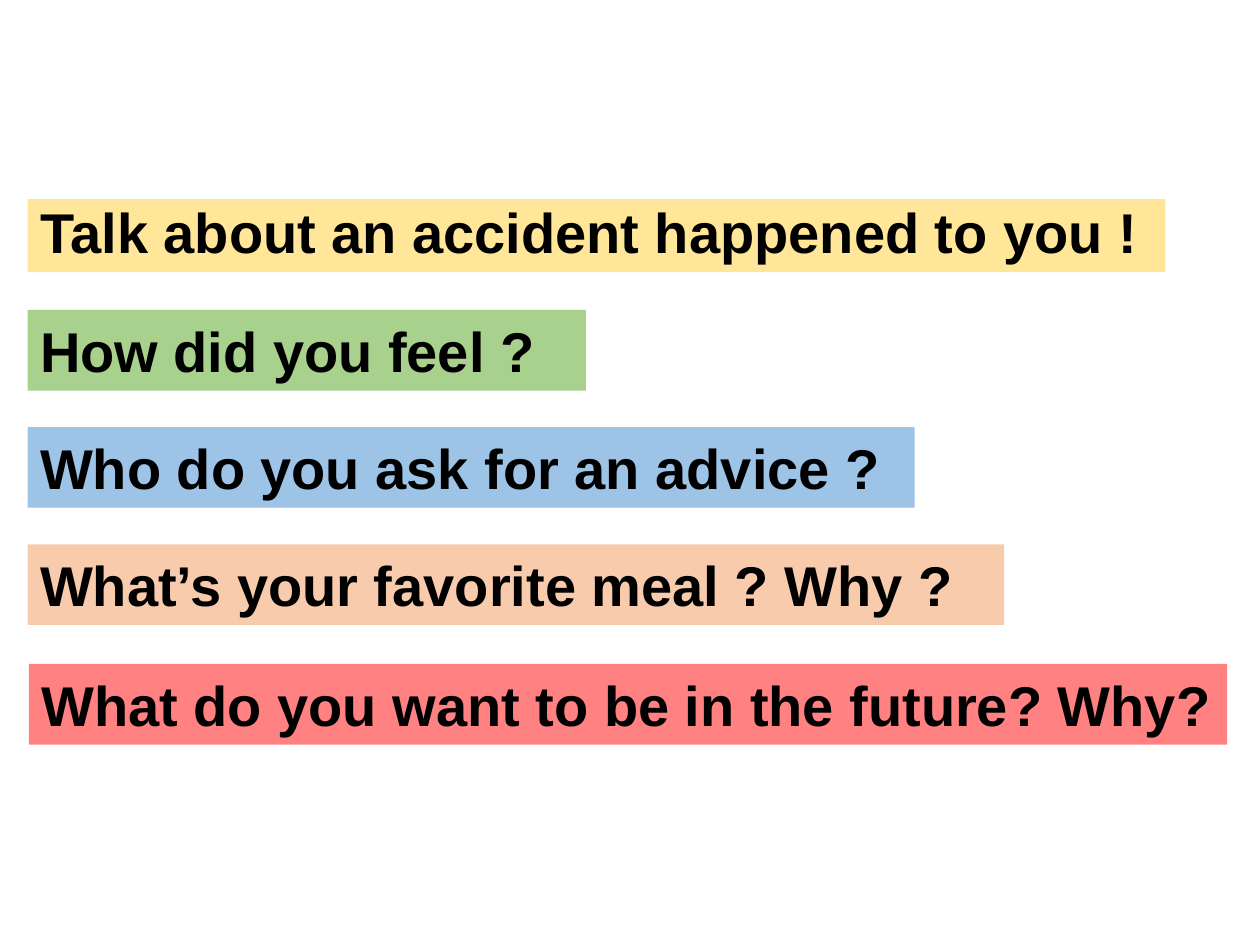
from typing import NamedTuple

from pptx import Presentation
from pptx import util as u
from pptx.dml.color import RGBColor
from pptx.enum import text
from pptx.oxml.ns import qn
from lxml import etree

BLACK = RGBColor(0x00, 0x00, 0x00)
YELLOW = RGBColor(0xFF, 0xE6, 0x99)
GREEN = RGBColor(0xA9, 0xD1, 0x8E)
BLUE = RGBColor(0x9D, 0xC3, 0xE6)
PEACH = RGBColor(0xF8, 0xCB, 0xAD)
RED = RGBColor(0xFF, 0x81, 0x81)

LEFT = 0.22
QUESTION_HEIGHT = 0.64


class Band(NamedTuple):
    wording: str
    top: float
    width: float
    color: RGBColor
    left: float = LEFT
    height: float = QUESTION_HEIGHT


TOPIC = Band("Talk about an accident happened to you !", 1.58, 9.03, YELLOW, height=0.58)
QUESTIONS = [
    Band("How did you feel ?", 2.46, 4.43, GREEN),
    Band("Who do you ask for an advice ?", 3.39, 7.04, BLUE),
    Band("What’s your favorite meal ? Why ?", 4.32, 7.75, PEACH),
    Band("What do you want to be in the future? Why?", 5.27, 9.51, RED, left=0.23),
]


def fill_band(sp, band: Band):
    """Place, colour and letter a shape; return its paragraph."""
    sp.left, sp.top = u.Inches(band.left), u.Inches(band.top)
    sp.width, sp.height = u.Inches(band.width), u.Inches(band.height)
    sp.fill.solid()
    sp.fill.fore_color.rgb = band.color
    tf = sp.text_frame
    tf.word_wrap = True
    tf.vertical_anchor = text.MSO_ANCHOR.TOP
    p = tf.paragraphs[0]
    r = p.add_run()
    r.text = band.wording
    r.font.name = "Arial"
    r.font.size = u.Pt(32)
    r.font.bold = True
    r.font.color.rgb = BLACK
    return p


def add_topic(sp, band: Band) -> None:
    """Turn the body placeholder into an unbulleted band."""
    p = fill_band(sp, band)
    sp.text_frame.auto_size = text.MSO_AUTO_SIZE.NONE
    pPr = p._p.get_or_add_pPr()
    pPr.set("marL", "0")
    pPr.set("indent", "0")
    etree.SubElement(pPr, qn("a:buNone"))
    p.line_spacing = 0.9
    p.space_before = u.Pt(0)


def add_question(slide, band: Band) -> None:
    sp = slide.shapes.add_textbox(0, 0, 0, 0)
    fill_band(sp, band)
    sp.text_frame.auto_size = text.MSO_AUTO_SIZE.SHAPE_TO_FIT_TEXT


def main() -> None:
    prs = Presentation()
    prs.slide_width, prs.slide_height = u.Inches(10), u.Inches(7.5)
    slide = prs.slides.add_slide(prs.slide_layouts[1])
    title = slide.shapes.title
    title._element.getparent().remove(title._element)
    add_topic(slide.placeholders[1], TOPIC)
    for question in QUESTIONS:
        add_question(slide, question)
    prs.save("out.pptx")


if __name__ == "__main__":
    main()
